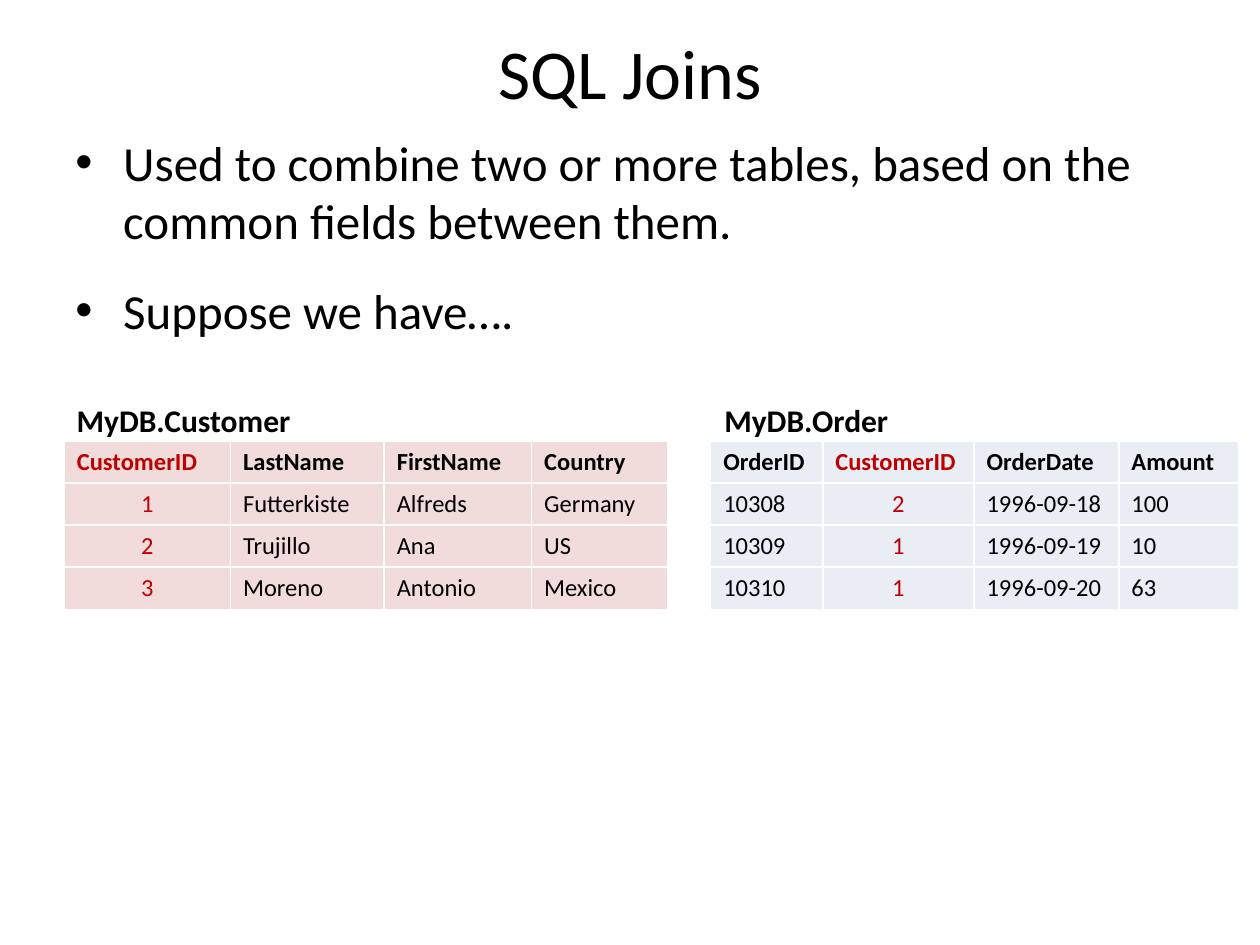
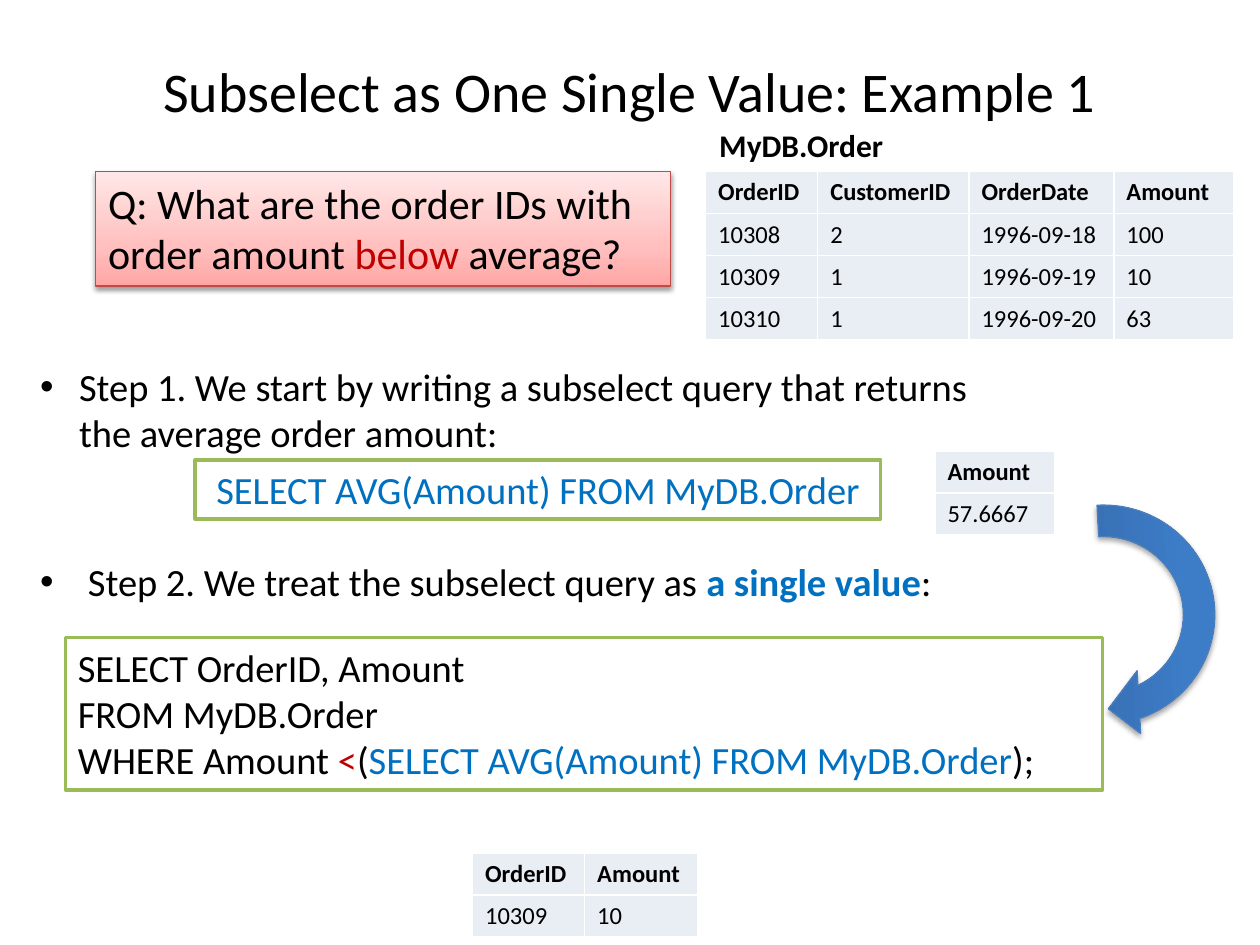
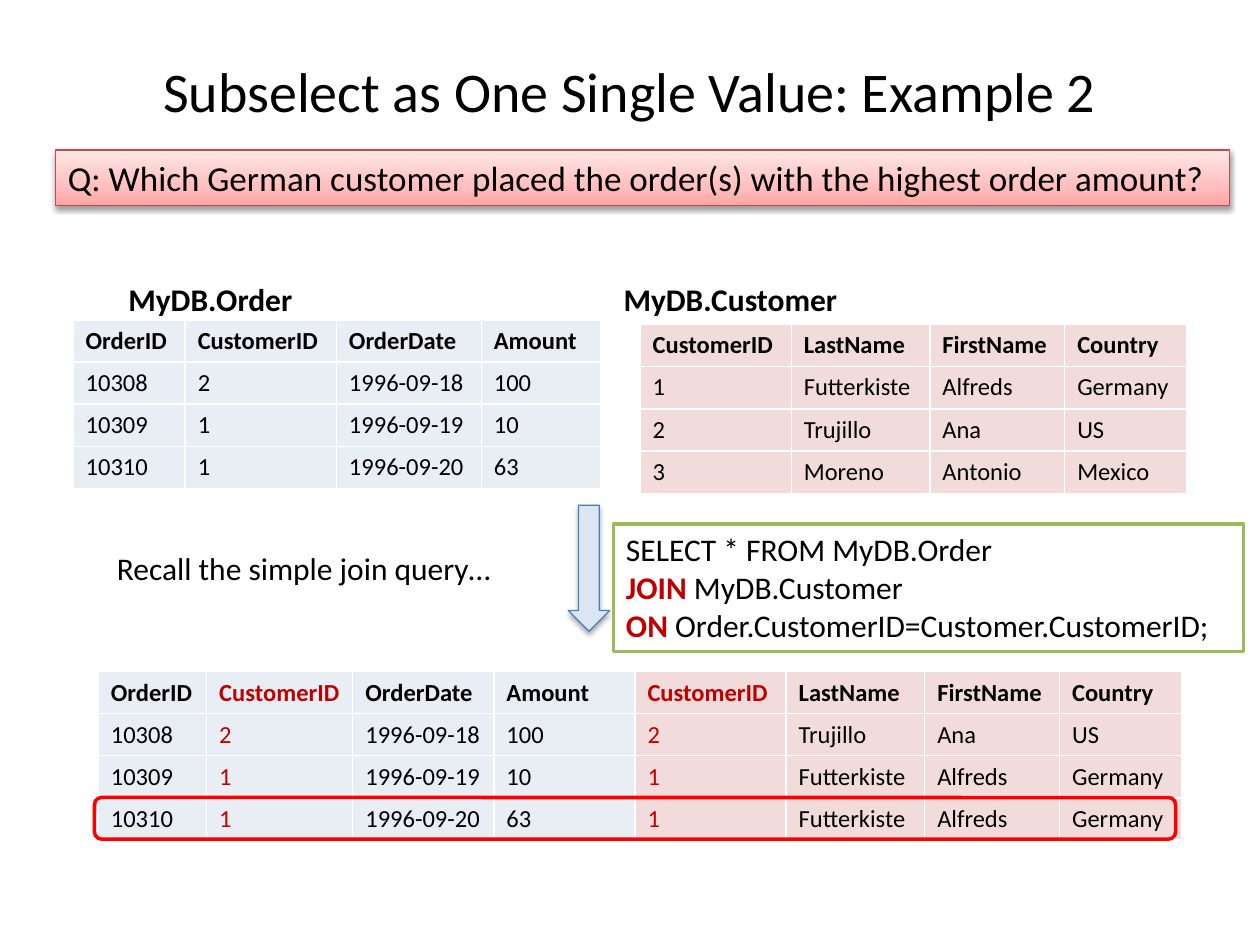
import pptx
import pptx.util
import pptx.dml.color
import pptx.enum.shapes
import pptx.enum.text
from lxml import etree
from pptx.oxml.ns import qn

Inches, Pt = pptx.util.Inches, pptx.util.Pt
SHAPE = pptx.enum.shapes.MSO_SHAPE
ALIGN = pptx.enum.text.PP_ALIGN
ANCHOR = pptx.enum.text.MSO_ANCHOR

# Content
FONT = "Calibri"
COLORS = {
    "black": "000000", "white": "FFFFFF", "key": "C00000", "query": "0070C0",
    "order": "E9EDF4", "customer": "F2DCDB", "green": "9BBB59",
    "question_line": "BF4C48", "arrow_line": "4B7EBC", "arrow": "DCE6F2",
    "highlight": "FF0000",
}
PINK = [(0, "FFA6A5"), (35, "FFC0BF"), (100, "FFE7E7")]
BLUE = [(0, "2F5F99"), (80, "3D7CC7"), (100, "3A7CCB")]

ORDERS = [
    ("OrderID", "CustomerID", "OrderDate", "Amount"),
    ("10308", "2", "1996-09-18", "100"),
    ("10309", "1", "1996-09-19", "10"),
    ("10310", "1", "1996-09-20", "63"),
]
CUSTOMERS = [
    ("CustomerID", "LastName", "FirstName", "Country"),
    ("1", "Futterkiste", "Alfreds", "Germany"),
    ("2", "Trujillo", "Ana", "US"),
    ("3", "Moreno", "Antonio", "Mexico"),
]
CUSTOMER_BY_ID = {row[0]: row for row in CUSTOMERS}
JOINED = [row + CUSTOMER_BY_ID[row[1]] for row in ORDERS]
AVERAGE = [("Amount",), ("57.6667",)]
BELOW_AVERAGE = [("OrderID", "Amount"), ("10309", "10")]

ORDER_COLS = [0.89, 1.2, 1.15, 0.95]
CUSTOMER_COLS = [1.2, 1.1, 1.07, 0.97]
ROW_H = 0.333

# Each paragraph is a string or a list of runs: (text, colour, bold)
SUBSELECT = "SELECT AVG(Amount) FROM MyDB.Order"
JOIN_POINTS = [
    "Used to combine two or more tables, based on the common fields between them.",
    "Suppose we have….",
]
BELOW_QUESTION = [[("Q: What are the order IDs with order amount ",),
                   ("below", "key"), (" average?",)]]
STEP_1 = ["Step 1. We start by writing a subselect query that returns "
          "the average order amount:"]
STEP_2 = [[("Step 2. We treat the subselect query as ",),
           ("a single value", "query", True), (":",)]]
BELOW_QUERY = [
    "SELECT OrderID, Amount",
    "FROM MyDB.Order",
    [("WHERE Amount ",), ("<", "key"), ("(",), (SUBSELECT, "query"), (");",)],
]
HIGHEST_QUESTION = ["Q: Which German customer placed the order(s) "
                    "with the highest order amount?"]
JOIN_QUERY = [
    "SELECT * FROM MyDB.Order",
    [("JOIN ", "key", True), ("MyDB.Customer",)],
    [("ON ", "key", True), ("Order.CustomerID=Customer.CustomerID;",)],
]


# Helpers
def rgb(name):
    return pptx.dml.color.RGBColor.from_string(COLORS[name])


def write(tf, paragraphs, size, color="black", bold=False, align=ALIGN.LEFT,
          anchor=ANCHOR.TOP, wrap=True, indent=0, before=0, after=0):
    """Fill a text frame; an indent above zero makes bullets, and
    before/after set the gaps between paragraphs."""
    tf.word_wrap = wrap
    tf.vertical_anchor = anchor
    for i, runs in enumerate(paragraphs):
        p = tf.paragraphs[0] if i == 0 else tf.add_paragraph()
        p.alignment = align
        p.space_before = Pt(before if i else 0)
        p.space_after = Pt(after if i < len(paragraphs) - 1 else 0)
        if indent:
            pPr = p._p.get_or_add_pPr()
            pPr.set("marL", str(Inches(indent)))
            pPr.set("indent", str(-Inches(indent)))
            etree.SubElement(pPr, qn("a:buFont"), typeface="Arial")
            etree.SubElement(pPr, qn("a:buChar"), char="•")
        for text, *style in ([(runs,)] if isinstance(runs, str) else runs):
            r = p.add_run()
            r.text = text
            r.font.name = FONT
            r.font.size = Pt(size)
            r.font.color.rgb = rgb(style[0] if style else color)
            r.font.bold = style[1] if len(style) > 1 else bold


def add_slide(prs, title, size, height):
    s = prs.slides.add_slide(prs.slide_layouts[5])
    sp = s.shapes.title
    sp.left, sp.top = Inches(0.5), Inches(0.3)
    sp.width, sp.height = Inches(9), Inches(height)
    write(sp.text_frame, [title], size, align=ALIGN.CENTER, anchor=ANCHOR.MIDDLE)
    return s


def add_text(s, at, paragraphs, size, **fmt):
    sp = s.shapes.add_textbox(*map(Inches, at))
    write(sp.text_frame, paragraphs, size, **fmt)


def add_label(s, left, top, text):
    width = 1.91 if "Customer" in text else 1.51
    add_text(s, (left, top, width, 0.4), [text], 18, bold=True, wrap=False)


def add_box(s, kind, at, line, width, fill=None, shadow=None):
    """fill is a colour name or a list of gradient stops; shadow is
    (opacity, distance)."""
    sp = s.shapes.add_shape(kind, *map(Inches, at))
    sp.shadow.inherit = False
    sp.line.color.rgb = rgb(line)
    sp.line.width = Pt(width)
    if fill is None:
        sp.fill.background()
    elif isinstance(fill, str):
        sp.fill.solid()
        sp.fill.fore_color.rgb = rgb(fill)
    else:
        sp.fill.gradient()
        sp.fill.gradient_angle = 90
        stops = sp._element.spPr.find(".//" + qn("a:gsLst"))
        for gs in list(stops):
            stops.remove(gs)
        for pos, value in fill:
            gs = etree.SubElement(stops, qn("a:gs"), pos=str(pos * 1000))
            etree.SubElement(gs, qn("a:srgbClr"), val=value)
    if shadow:
        alpha, dist = shadow
        effects = sp._element.spPr.find(qn("a:effectLst"))
        outer = etree.SubElement(effects, qn("a:outerShdw"), blurRad=str(Pt(3.1)),
                                 dist=str(Pt(dist)), dir="5400000", rotWithShape="0")
        clr = etree.SubElement(outer, qn("a:srgbClr"), val=COLORS["black"])
        etree.SubElement(clr, qn("a:alpha"), val=str(alpha * 1000))
    return sp


def add_question(s, at, paragraphs, size):
    sp = add_box(s, SHAPE.RECTANGLE, at, "question_line", 0.75, PINK, (38, 1.6))
    write(sp.text_frame, paragraphs, size)


def add_query(s, at, paragraphs, size, **fmt):
    sp = add_box(s, SHAPE.RECTANGLE, at, "green", 2, "white")
    write(sp.text_frame, paragraphs, size, **fmt)


def add_table(s, left, top, rows, cols, fills, red_keys=False, center_keys=False):
    """fills holds one colour name per column; the keys are the
    CustomerID columns."""
    frame = s.shapes.add_table(len(rows), len(cols), Inches(left), Inches(top),
                               Inches(sum(cols)), Inches(ROW_H * len(rows)))
    table = frame.table
    table.first_row = table.horz_banding = False
    for col, width in zip(table.columns, cols):
        col.width = Inches(width)
    for i, row in enumerate(rows):
        table.rows[i].height = Inches(ROW_H)
        for j, text in enumerate(row):
            key = rows[0][j] == "CustomerID"
            cell = table.cell(i, j)
            cell.fill.solid()
            cell.fill.fore_color.rgb = rgb(fills[j])
            cell.vertical_anchor = ANCHOR.MIDDLE
            write(cell.text_frame, [text], 14, bold=i == 0,
                  color="key" if key and red_keys else "black",
                  align=ALIGN.CENTER if key and center_keys and i else ALIGN.LEFT,
                  anchor=None, wrap=None)


# Slides
def joins_slide(prs):
    s = add_slide(prs, "SQL Joins", 40, 0.53)
    add_text(s, (0.5, 1, 9, 2), JOIN_POINTS, 28, indent=0.38, before=5.6, after=12)
    add_table(s, 5.64, 3.5, ORDERS, ORDER_COLS, ["order"] * 4, True, True)
    add_table(s, 0.51, 3.5, CUSTOMERS, [1.32, 1.22, 1.17, 1.08],
              ["customer"] * 4, True, True)
    add_label(s, 5.65, 3.13, "MyDB.Order")
    add_label(s, 0.51, 3.13, "MyDB.Customer")


def below_average_slide(prs):
    s = add_slide(prs, "Subselect as One Single Value: Example 1", 32, 0.83)
    add_label(s, 5.61, 0.95, "MyDB.Order")
    add_table(s, 5.6, 1.36, ORDERS, ORDER_COLS, ["order"] * 4)
    add_question(s, (0.76, 1.36, 4.56, 0.91), BELOW_QUESTION, 24)
    sp = add_box(s, SHAPE.CIRCULAR_ARROW, (7.76, 3.87, 1.99, 2.02),
                 "arrow_line", 0.75, BLUE, (35, 1.8))
    sp.rotation = 86.8
    add_table(s, 3.75, 6.77, BELOW_AVERAGE, [0.89, 0.9], ["order"] * 2)
    add_table(s, 7.42, 3.58, AVERAGE, [0.95], ["order"])
    add_text(s, (0.22, 2.83, 7.94, 0.84), STEP_1, 22, indent=0.31)
    add_text(s, (0.22, 4.38, 9, 0.47), STEP_2, 22, indent=0.38)
    add_query(s, (0.52, 5.06, 8.23, 1.21), BELOW_QUERY, 22)
    add_query(s, (1.55, 3.65, 5.44, 0.47), [" " + SUBSELECT], 22,
              color="query", wrap=False)


def highest_amount_slide(prs):
    s = add_slide(prs, "Subselect as One Single Value: Example 2", 32, 0.83)
    add_question(s, (0.44, 1.19, 9.32, 0.44), HIGHEST_QUESTION, 20)
    add_table(s, 5.08, 2.57, CUSTOMERS, CUSTOMER_COLS, ["customer"] * 4)
    add_label(s, 0.92, 2.17, "MyDB.Order")
    add_label(s, 4.85, 2.17, "MyDB.Customer")
    add_table(s, 0.58, 2.54, ORDERS, ORDER_COLS, ["order"] * 4)
    add_box(s, SHAPE.DOWN_ARROW, (4.51, 4.01, 0.33, 1), "arrow_line", 0.75,
            "arrow", (35, 1.8))
    add_table(s, 0.78, 5.33, JOINED, [0.86, 1.16, 1.12, 1.12] + CUSTOMER_COLS,
              ["order"] * 4 + ["customer"] * 4, True)
    add_query(s, (4.87, 4.16, 5, 1.01), JOIN_QUERY, 18)
    add_text(s, (0.83, 4.31, 3.2, 0.4), ["Recall the simple join query…"], 18,
             wrap=False)
    # Frame around the last joined row
    add_box(s, SHAPE.ROUNDED_RECTANGLE, (0.75, 6.33, 8.58, 0.33), "highlight", 2)


def main():
    prs = pptx.Presentation()
    prs.slide_width, prs.slide_height = Inches(10), Inches(7.5)
    joins_slide(prs)
    below_average_slide(prs)
    highest_amount_slide(prs)
    prs.save("out.pptx")


if __name__ == "__main__":
    main()
